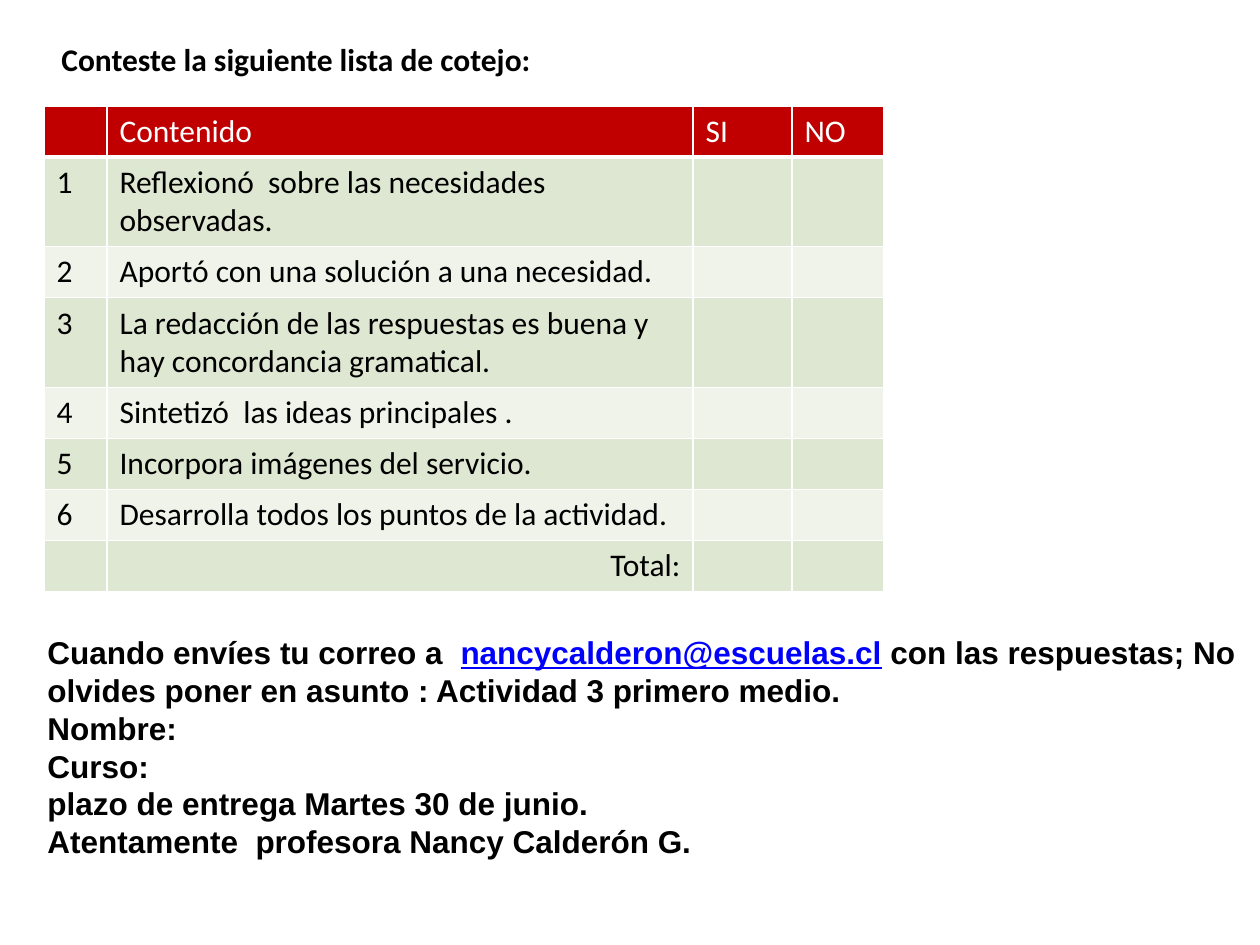
from dataclasses import dataclass

from lxml.etree import SubElement
from pptx import Presentation
from pptx.dml.color import RGBColor
from pptx.enum.text import MSO_AUTO_SIZE, PP_ALIGN
from pptx.oxml.ns import qn
from pptx.util import Emu, Pt

EMU_PER_PX = 914400 / 126


@dataclass(frozen=True)
class Theme:
    """Colours, fonts and type sizes of the slide."""
    header: str = "C00000"
    bands: tuple = ("EFF3EA", "DEE7D1")
    white: str = "FFFFFF"
    ink: str = "000000"
    link: str = "0000FF"
    table_font: str = "Calibri"
    note_font: str = "Arial"
    size: int = 18
    rule: int = 1
    header_rule: int = 3


THEME = Theme()
COLUMNS = (63, 586, 99, 92)
ROW_HEIGHT = 51
CRITERIA = (
    "Reflexionó  sobre las necesidades observadas.",
    "Aportó con una solución a una necesidad.",
    "La redacción de las respuestas es buena y hay concordancia gramatical.",
    "Sintetizó  las ideas principales .",
    "Incorpora imágenes del servicio.",
    "Desarrolla todos los puntos de la actividad.",
)
NOTES = (
    (("Cuando envíes tu correo a  ", {}),
     ("nancycalderon@escuelas.cl", {"color": THEME.link, "underline": True}),
     (" con las respuestas; No olvides poner en asunto : "
      "Actividad 3 primero medio.", {})),
    (("Nombre:", {}),),
    (("Curso:", {}),),
    (("plazo de entrega Martes 30 de junio.\n"
      "Atentamente  profesora Nancy Calderón G.", {}),),
)


def px(length):
    """Turn pixels into EMU."""
    return Emu(round(length * EMU_PER_PX))


def add_span(para, text, color=THEME.ink, **font_format):
    """Add formatted text, breaking the line at each newline."""
    for index, line in enumerate(text.split("\n")):
        if index:
            para.add_line_break()
        span = para.add_run()
        span.text = line
        span.font.color.rgb = RGBColor.from_string(color)
        for name, value in {"size": Pt(THEME.size), **font_format}.items():
            setattr(span.font, name, value)


def add_text(page, bounds, paragraphs, font, wrap):
    """Add a bold text box made of paragraphs of spans."""
    box = page.shapes.add_textbox(*map(px, bounds))
    frame = box.text_frame
    frame.word_wrap = wrap
    frame.auto_size = MSO_AUTO_SIZE.SHAPE_TO_FIT_TEXT
    for index, spans in enumerate(paragraphs):
        para = frame.add_paragraph() if index else frame.paragraphs[0]
        for text, font_format in spans:
            add_span(para, text, **{"name": font, "bold": True, **font_format})


def add_borders(cell, bottom):
    """Draw white rules on the four sides of a cell."""
    properties = cell._tc.get_or_add_tcPr()
    widths = {"lnL": THEME.rule, "lnR": THEME.rule, "lnT": THEME.rule, "lnB": bottom}
    for position, (side, width) in enumerate(widths.items()):
        line = SubElement(properties, qn(f"a:{side}"), w=str(Pt(width)))
        fill = SubElement(line, qn("a:solidFill"))
        SubElement(fill, qn("a:srgbClr"), val=THEME.white)
        properties.insert(position, line)


def style_cell(cell, text, fill, color, bottom):
    """Fill a cell, rule it and write its text."""
    cell.fill.solid()
    cell.fill.fore_color.rgb = RGBColor.from_string(fill)
    add_borders(cell, bottom)
    if text:
        add_span(cell.text_frame.paragraphs[0], text, color,
                 name=THEME.table_font, bold=False)


def add_checklist(page, left, top):
    """Add the checklist table with its header and total rows."""
    rows = [("", "Contenido", "SI", "NO")]
    rows += [(str(number), text, "", "") for number, text in enumerate(CRITERIA, 1)]
    rows.append(("", "Total:", "", ""))
    bounds = (left, top, sum(COLUMNS), ROW_HEIGHT * len(rows))
    table = page.shapes.add_table(len(rows), len(COLUMNS), *map(px, bounds)).table
    for column, width in zip(table.columns, COLUMNS):
        column.width = px(width)
    for index, texts in enumerate(rows):
        table.rows[index].height = px(ROW_HEIGHT)
        if index:
            look = (THEME.bands[index % 2], THEME.ink, THEME.rule)
        else:
            look = (THEME.header, THEME.white, THEME.header_rule)
        for cell, text in zip(table.rows[index].cells, texts):
            style_cell(cell, text, *look)
    total = table.cell(len(rows) - 1, 1)
    total.text_frame.paragraphs[0].alignment = PP_ALIGN.RIGHT


def main():
    """Build and save the slide."""
    deck = Presentation()
    deck.slide_width, deck.slide_height = px(1260), px(945)
    page = deck.slides.add_slide(deck.slide_layouts[6])
    add_checklist(page, 44, 106)
    title = ((("Conteste la siguiente lista de cotejo:", {}),),)
    add_text(page, (49, 34, 515, 50), title, THEME.table_font, False)
    add_text(page, (35, 627, 1216, 242), NOTES, THEME.note_font, True)
    deck.save("out.pptx")


if __name__ == "__main__":
    main()
